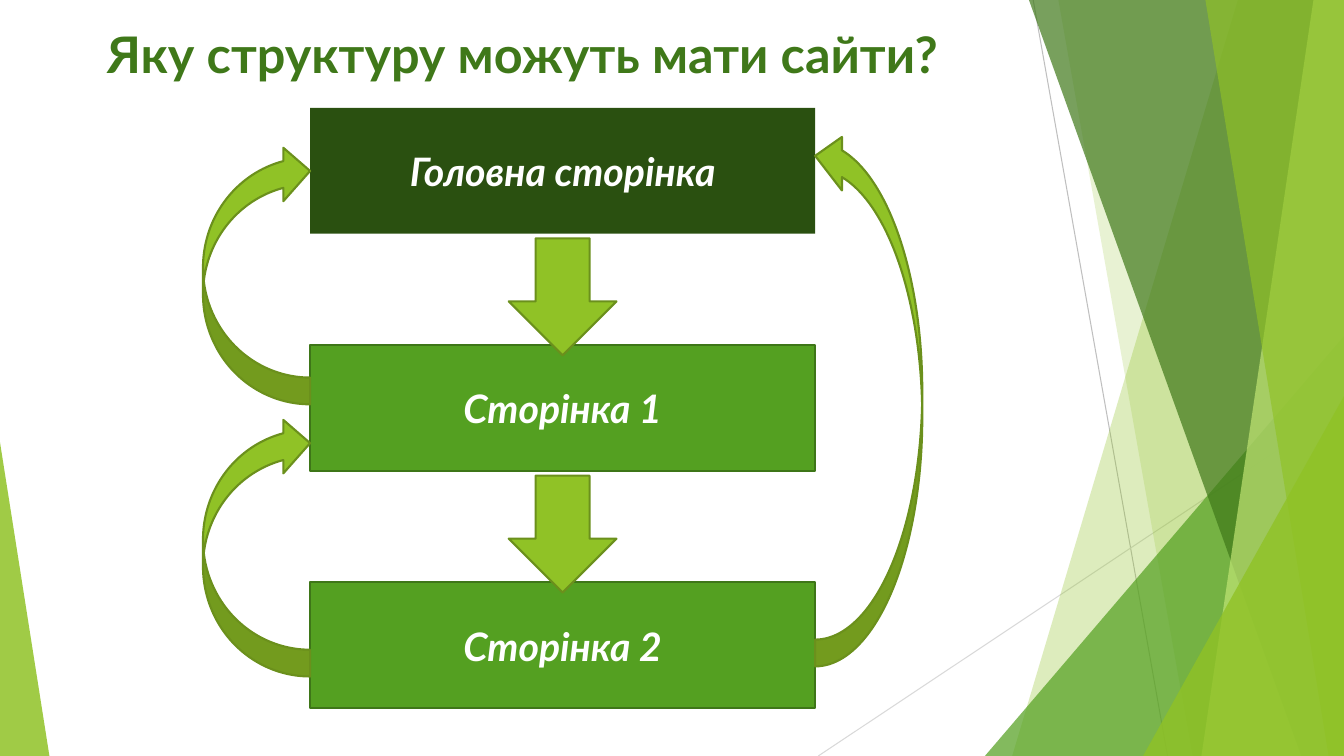
from lxml import etree
from pptx import Presentation
from pptx.dml.color import RGBColor
from pptx.enum.shapes import MSO_CONNECTOR, MSO_SHAPE
from pptx.enum.text import MSO_ANCHOR, PP_ALIGN
from pptx.oxml.ns import qn
from pptx.util import Pt

RECT, TRIANGLE = MSO_SHAPE.RECTANGLE, MSO_SHAPE.ISOSCELES_TRIANGLE
LEFT_ARROW, CURVED_ARROW = MSO_SHAPE.LEFT_ARROW, MSO_SHAPE.CURVED_RIGHT_ARROW
STRAIGHT = MSO_CONNECTOR.STRAIGHT
TOP, MIDDLE = MSO_ANCHOR.TOP, MSO_ANCHOR.MIDDLE
LEFT, CENTER = PP_ALIGN.LEFT, PP_ALIGN.CENTER

COLORS = {
    "lime": "90C226", "pale": "C0E474", "green": "54A021", "moss": "3F7819",
    "dark": "2A5010", "page_line": "3E7618", "arrow_line": "6B901C",
    "gray": "BFBFBF", "light_gray": "D9D9D9", "white": "FFFFFF",
}
W, H = 960, 540

prs = Presentation()
prs.slide_width, prs.slide_height = Pt(W), Pt(H)
s = prs.slides.add_slide(prs.slide_layouts[6])


def paint(sp, fill, line=None, alpha=None):
    sp.shadow.inherit = False
    sp.fill.solid()
    sp.fill.fore_color.rgb = RGBColor.from_string(COLORS[fill])
    if alpha:
        clr = sp._element.spPr.find(qn("a:solidFill"))[0]
        etree.SubElement(clr, qn("a:alpha"), val=str(alpha * 1000))
    if line:
        sp.line.color.rgb = RGBColor.from_string(COLORS[line])
        sp.line.width = Pt(1.5)
    else:
        sp.line.fill.background()


def write(sp, text, size, color="white", italic=False, align=CENTER, anchor=MIDDLE):
    tf = sp.text_frame
    tf.word_wrap = True
    tf.vertical_anchor = anchor
    p = tf.paragraphs[0]
    p.alignment = align
    r = p.add_run()
    r.text = text
    r.font.name, r.font.size = "Lato", Pt(size)
    r.font.bold, r.font.italic = True, italic
    r.font.color.rgb = RGBColor.from_string(COLORS[color])
    return r


# Thin background lines
for x1, y1, x2, y2, color in [(738, 0, 834, H, "gray"), (W, 290, 584.5, H, "light_gray")]:
    line = s.shapes.add_connector(STRAIGHT, Pt(x1), Pt(y1), Pt(x2), Pt(y2))
    line.line.color.rgb = RGBColor.from_string(COLORS[color])
    line.line.width = Pt(0.75)
    etree.SubElement(line._element.spPr, qn("a:effectLst"))

# Bands on the right edge: x at the top, x at the bottom.
# Triangles in the bottom corners: left, top, width, apex position.
facets = [
    ((884.2, 723), "lime", 30),
    ((756, 851.8), "lime", 20),
    ((703.5, 240, 256.5, 1), "green", 72),
    ((735, 929.5), "moss", 70),
    ((938.2, 858.2), "pale", 70),
    ((861, 949), "lime", 65),
    ((816.5, 283, 143.5, 1), "lime", 80),
    ((0, 316, 35.3, 0), "lime", 85),
]
for shape, color, alpha in facets:
    if len(shape) == 2:
        x_top, x_bottom = shape
        fb = s.shapes.build_freeform(Pt(x_top), 0)
        corners = [(W, 0), (W, H), (x_bottom, H)]
        fb.add_line_segments([(Pt(x), Pt(y)) for x, y in corners])
        sp = fb.convert_to_shape()
    else:
        x, y, w, apex = shape
        sp = s.shapes.add_shape(TRIANGLE, Pt(x), Pt(y), Pt(w), Pt(H - y))
        sp.adjustments[0] = apex
    paint(sp, color, alpha=alpha)

# Title with outlined letters
title = s.shapes.add_textbox(Pt(69.2), Pt(13), Pt(706), Pt(64))
r = write(title, "Яку структуру можуть мати сайти?", 36, "moss", align=LEFT, anchor=TOP)
r.font._element.insert(0, etree.Element(qn("a:ln"), w=str(Pt(1.75))))
outline = etree.SubElement(r.font._element[0], qn("a:solidFill"))
etree.SubElement(outline, qn("a:srgbClr"), val=COLORS["green"])

# Pages of the site
PAGE_X, PAGE_Y, PAGE_W, PAGE_H, STEP = 221.5, 77, 360.8, 90, 169.5
pages = [
    ("Головна сторінка", "dark", None),
    ("Сторінка 1", "green", "page_line"),
    ("Сторінка 2", "green", "page_line"),
]
for i, (text, fill, line) in enumerate(pages):
    sp = s.shapes.add_shape(RECT, Pt(PAGE_X), Pt(PAGE_Y + i * STEP), Pt(PAGE_W), Pt(PAGE_H))
    paint(sp, fill, line)
    write(sp, text, 28, italic=True)

# Straight arrows down to the next page
ARROW_W, ARROW_H = 83.5, 77
for i in range(2):
    x = PAGE_X + (PAGE_W - ARROW_W) / 2
    sp = s.shapes.add_shape(LEFT_ARROW, Pt(x), Pt(173.5 + i * STEP), Pt(ARROW_W), Pt(ARROW_H))
    sp.rotation = 270
    paint(sp, "lime", "arrow_line")

# Curved arrows back up
CURVE_W = 76.5
returns = [
    (PAGE_X - CURVE_W, 297.4, 185.8, False),
    (PAGE_X - CURVE_W, 103, 185.8, False),
    (PAGE_X + PAGE_W, 92.2, 383.8, True),
]
for x, y, h, mirrored in returns:
    sp = s.shapes.add_shape(CURVED_ARROW, Pt(x), Pt(y), Pt(CURVE_W), Pt(h))
    xfrm = sp._element.spPr.find(qn("a:xfrm"))
    xfrm.set("flipV", "1")
    if mirrored:
        xfrm.set("flipH", "1")
    paint(sp, "lime", "arrow_line")

prs.save("out.pptx")
